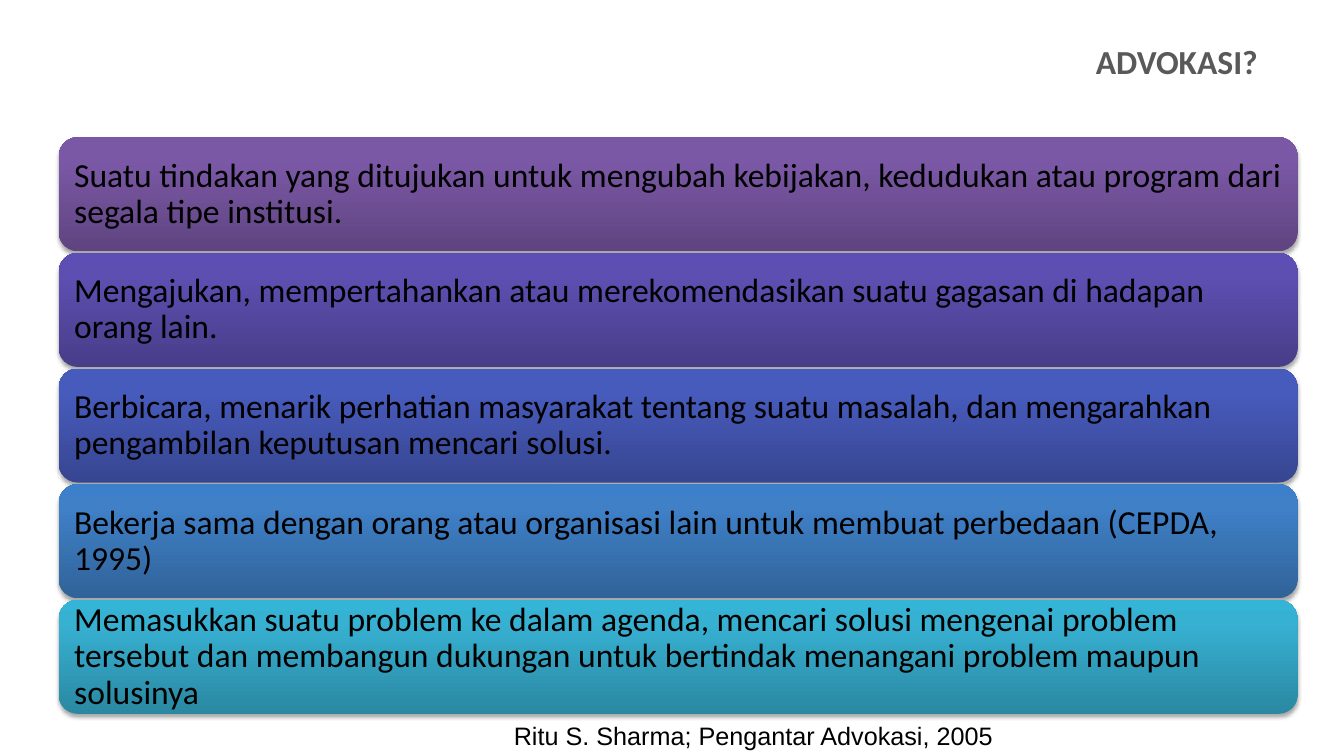
from lxml.etree import SubElement
from pptx import Presentation
from pptx.dml.color import RGBColor
from pptx.enum.shapes import MSO_SHAPE
from pptx.enum.text import MSO_ANCHOR, PP_ALIGN
from pptx.oxml.ns import qn
from pptx.util import Cm, Pt

BLACK = RGBColor(0x00, 0x00, 0x00)
GREY = RGBColor(0x59, 0x59, 0x59)
PURPLE = [RGBColor(0x5F, 0x44, 0x80), RGBColor(0x7B, 0x58, 0xA6), RGBColor(0x7C, 0x57, 0xA8)]
VIOLET = [RGBColor(0x48, 0x3D, 0x89), RGBColor(0x5D, 0x4F, 0xB1), RGBColor(0x5C, 0x4E, 0xB4)]
INDIGO = [RGBColor(0x37, 0x46, 0x91), RGBColor(0x47, 0x5B, 0xBC), RGBColor(0x45, 0x5A, 0xBF)]
BLUE = [RGBColor(0x30, 0x63, 0x99), RGBColor(0x3F, 0x80, 0xC7), RGBColor(0x3C, 0x80, 0xCB)]
TEAL = [RGBColor(0x2A, 0x88, 0xA2), RGBColor(0x37, 0xB1, 0xD2), RGBColor(0x34, 0xB4, 0xD6)]
STOPS = [0, 80, 100]

DEFINITIONS = [
    ("Suatu tindakan yang ditujukan untuk mengubah kebijakan, kedudukan atau program dari segala tipe institusi.", PURPLE),
    ("Mengajukan, mempertahankan atau merekomendasikan suatu gagasan di hadapan orang lain.", VIOLET),
    ("Berbicara, menarik perhatian masyarakat tentang suatu masalah, dan mengarahkan pengambilan keputusan mencari solusi.", INDIGO),
    ("Bekerja sama dengan orang atau organisasi lain untuk membuat perbedaan (CEPDA, 1995)", BLUE),
    ("Memasukkan suatu problem ke dalam agenda, mencari solusi mengenai problem tersebut dan membangun dukungan untuk bertindak menangani problem maupun solusinya", TEAL),
]


def set_all(target, values):
    for name, value in values.items():
        setattr(target, name, value)


def write(frame, text, color, align=PP_ALIGN.LEFT, **font_format):
    frame.word_wrap = True
    paragraph = frame.paragraphs[0]
    paragraph.alignment = align
    run = paragraph.add_run()
    run.text = text
    set_all(run.font, font_format)
    run.font.color.rgb = color
    return paragraph


def add_color(parent, color):
    return SubElement(parent, qn("a:srgbClr"), val=str(color))


def shade(bar, colors):
    bar.fill.gradient()
    bar.fill.gradient_angle = 90
    stop_list = bar.element.spPr.find(qn("a:gradFill")).find(qn("a:gsLst"))
    for stop in list(stop_list):
        stop_list.remove(stop)
    for position, color in zip(STOPS, colors):
        add_color(SubElement(stop_list, qn("a:gs"), pos=str(position * 1000)), color)


def cast_shadow(bar):
    bar.shadow.inherit = False
    effects = bar.element.spPr.find(qn("a:effectLst"))
    shadow = SubElement(effects, qn("a:outerShdw"), blurRad=str(Pt(3.1)), dist=str(Pt(1.8)),
                        dir="5400000", rotWithShape="0")
    SubElement(add_color(shadow, BLACK), qn("a:alpha"), val="35000")


def add_caption(slide, box, text, color, **text_format):
    caption = slide.shapes.add_textbox(*box)
    write(caption.text_frame, text, color, **text_format)


def add_definitions(slide, left, top, width, height):
    gap = Cm(0.04)
    bar_height = (height - gap * (len(DEFINITIONS) - 1)) // len(DEFINITIONS)
    for index, (definition, colors) in enumerate(DEFINITIONS):
        bar = slide.shapes.add_shape(MSO_SHAPE.ROUNDED_RECTANGLE, left,
                                     top + index * (bar_height + gap), width, bar_height)
        shade(bar, colors)
        bar.line.fill.background()
        cast_shadow(bar)
        set_all(bar.text_frame, {
            "margin_left": Cm(0.25), "margin_right": Cm(0.25),
            "margin_top": Cm(0.25), "margin_bottom": Cm(0.25),
            "vertical_anchor": MSO_ANCHOR.MIDDLE,
        })
        paragraph = write(bar.text_frame, definition, BLACK, name="Calibri", size=Pt(24))
        paragraph.line_spacing = 0.9


def main():
    deck = Presentation()
    set_all(deck, {"slide_width": Cm(33.87), "slide_height": Cm(19.05)})
    slide = deck.slides.add_slide(deck.slide_layouts[6])
    add_caption(slide, (Cm(13.89), Cm(0.91), Cm(18.06), Cm(1.22)), "ADVOKASI?", GREY,
                align=PP_ALIGN.RIGHT, name="Calibri", size=Pt(24), bold=True)
    add_definitions(slide, Cm(1.48), Cm(3.46), Cm(31.22), Cm(14.53))
    add_caption(slide, (Cm(12.7), Cm(18.03), Cm(17.32), Cm(1.02)),
                "Ritu S. Sharma; Pengantar Advokasi, 2005", BLACK, name="Arial", size=Pt(18))
    deck.save("out.pptx")


if __name__ == "__main__":
    main()
